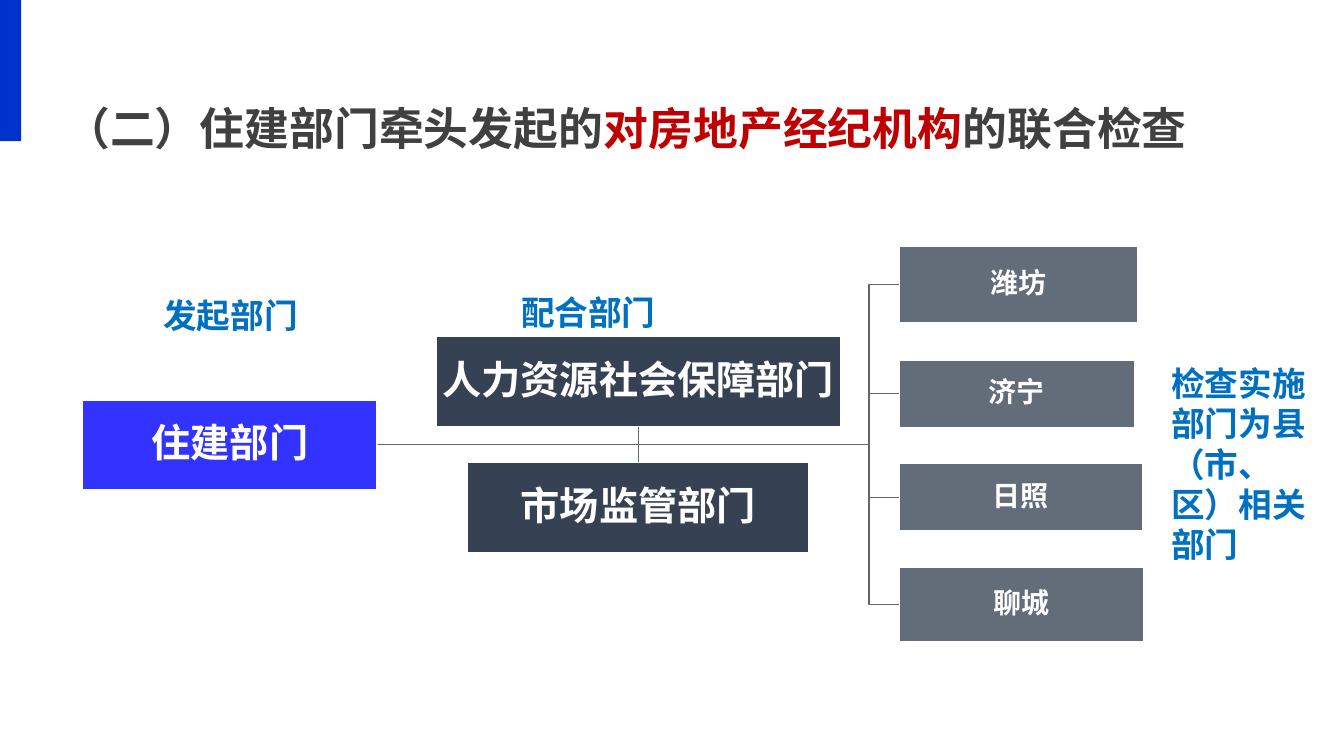
from lxml import etree
from pptx import Presentation, util as u
from pptx.dml.color import RGBColor
from pptx.enum import shapes, text
from pptx.oxml import ns

WIDTH, HEIGHT = 13.33, 7.5
FONT = "Noto Sans CJK SC"
WHITE, BLUE, NAVY, LINE = "FFFFFF", "0070C0", "212E41", "61656C"
TRUNK_Y, START_X, SPLIT_X, MIDDLE_X, CITY_X = 4.41, 3.74, 8.62, 6.33, 8.92


def color(value):
    """Turn a hex string into a colour."""
    return RGBColor.from_string(value)


def write(frame, spans, size, margins=None):
    """Write one bold paragraph made of (words, colour) spans."""
    frame.word_wrap = True
    if margins is not None:
        frame.margin_left = frame.margin_right = u.Inches(margins)
        frame.margin_top = frame.margin_bottom = u.Inches(margins)
    para = frame.paragraphs[0]
    font = para.font
    font.name, font.size, font.bold = FONT, u.Pt(size), True
    east = etree.SubElement(font._element, ns.qn("a:ea"))
    east.set("typeface", FONT)
    for words, shade in spans:
        span = para.add_run()
        span.text = words
        span.font.color.rgb = color(shade)
    return para


def label(page, place, spans, size):
    """Add a plain text box."""
    box = page.shapes.add_textbox(*map(u.Inches, place))
    write(box.text_frame, spans, size)


def block(page, place, fill, alpha=100, border=None):
    """Add a filled rectangle with the given opacity in percent."""
    box = page.shapes.add_shape(shapes.MSO_SHAPE.RECTANGLE, *map(u.Inches, place))
    box.shadow.inherit = False
    box.fill.solid()
    box.fill.fore_color.rgb = color(fill)
    if alpha < 100:
        shade = box._element.spPr.find(".//" + ns.qn("a:srgbClr"))
        etree.SubElement(shade, ns.qn("a:alpha")).set("val", str(alpha * 1000))
    if border:
        box.line.color.rgb = color(border)
        box.line.width = u.Pt(1)
    else:
        box.line.fill.background()
    return box


def department(page, words, place, fill, alpha, size):
    """Add a block with a centred white name."""
    frame = block(page, place, fill, alpha, WHITE).text_frame
    para = write(frame, [(words, WHITE)], size, 0.02)
    frame.vertical_anchor = text.MSO_ANCHOR.MIDDLE
    para.alignment = text.PP_ALIGN.CENTER
    para.line_spacing = 0.9


def branch(page, *points):
    """Draw an open line through the points."""
    corners = [tuple(map(u.Inches, point)) for point in points]
    builder = page.shapes.build_freeform(*corners[0], scale=1.0)
    builder.add_line_segments(corners[1:], close=False)
    route = builder.convert_to_shape()
    route.shadow.inherit = False
    route.fill.background()
    route.line.color.rgb = color(LINE)
    route.line.width = u.Pt(1)


def main():
    """Build the joint inspection slide."""
    deck = Presentation()
    deck.slide_width, deck.slide_height = u.Inches(WIDTH), u.Inches(HEIGHT)
    page = deck.slides.add_slide(deck.slide_layouts[6])

    block(page, (0, 0, 0.21, 1.4), "0033CC")
    label(page, (0.55, 0.95, 11.76, 0.64),
          [("（二）住建部门牵头发起的", "404040"), ("对房地产经纪机构", "C00000"),
           ("的联合检查", "404040")], 32)
    label(page, (11.52, 3.55, 1.6, 1.72),
          [("检查实施部门为县（市、区）相关部门", BLUE)], 24)

    cities = [("潍坊", 2.44, 2.36, 0.76), ("济宁", 3.57, 2.33, 0.67),
              ("日照", 4.6, 2.41, 0.67), ("聊城", 5.63, 2.42, 0.74)]
    partners = [("人力资源社会保障部门", 3.34, 4.01), ("市场监管部门", 4.59, 3.39)]
    start = (START_X, TRUNK_Y)

    for end in (4.23, 4.59):
        branch(page, start, (MIDDLE_X, TRUNK_Y), (MIDDLE_X, end))
    for name, top, width, height in cities:
        middle = top + height / 2
        branch(page, start, (SPLIT_X, TRUNK_Y), (SPLIT_X, middle), (CITY_X, middle))

    department(page, "住建部门", (0.82, 3.97, 2.92, 0.89), "0000FF", 80, 28)
    for name, top, width, height in cities:
        department(page, name, (CITY_X, top, width, height), NAVY, 70, 20)
    for name, top, width in partners:
        department(page, name, (MIDDLE_X - width / 2, top, width, 0.89), NAVY, 90, 28)

    label(page, (1.52, 2.88, 2.52, 0.5), [("发起部门", BLUE)], 24)
    label(page, (5.07, 2.85, 2.03, 0.5), [("配合部门", BLUE)], 24)
    deck.save("out.pptx")


if __name__ == "__main__":
    main()
